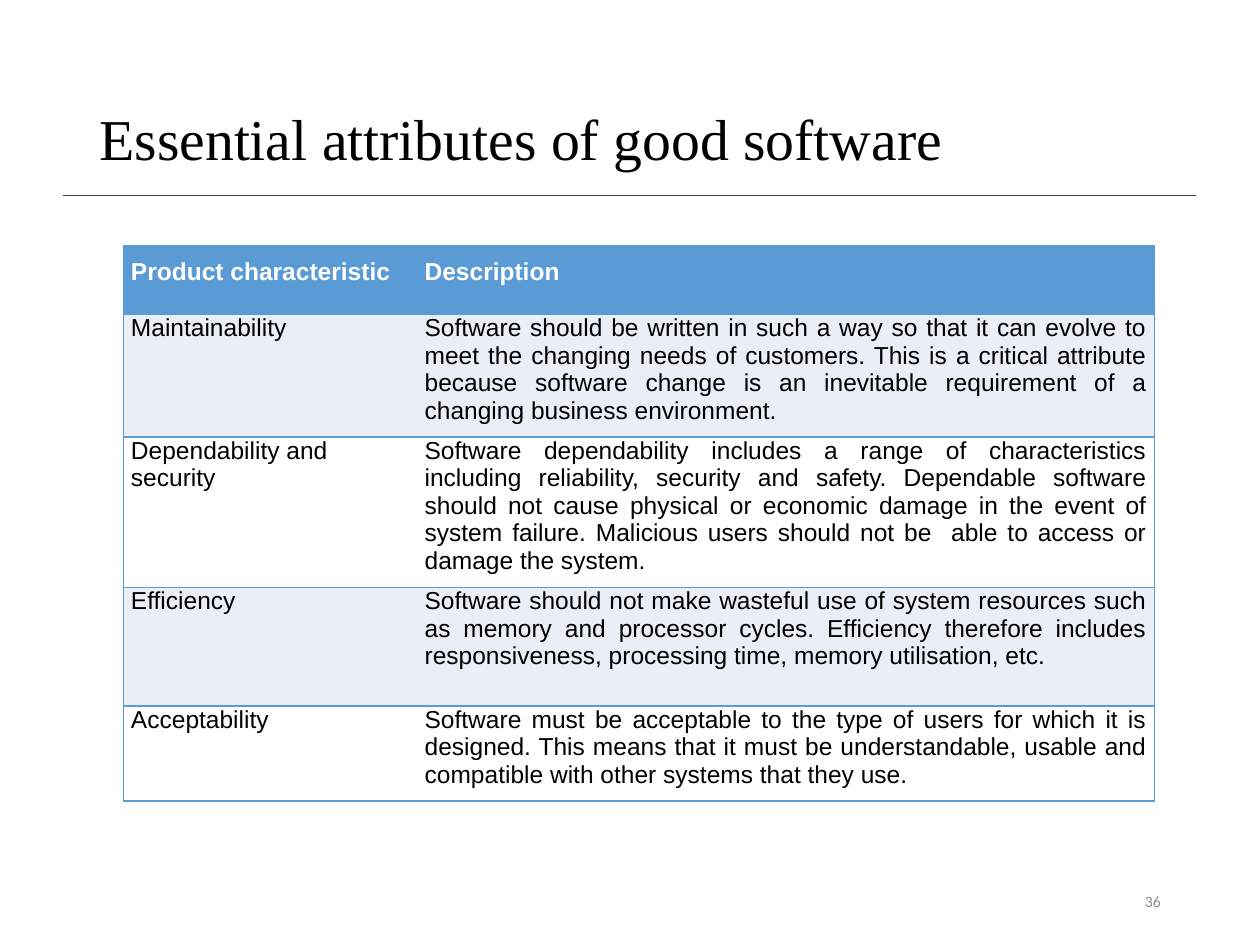
"""Build a slide with a table of the essential attributes of good software."""
from dataclasses import dataclass

from lxml.etree import SubElement
from pptx import Presentation
from pptx.dml.color import RGBColor
from pptx.enum.shapes import MSO_CONNECTOR
from pptx.enum.text import MSO_ANCHOR, MSO_AUTO_SIZE, PP_ALIGN
from pptx.oxml.ns import qn
from pptx.util import Cm, Pt

BLUE = "5B9BD5"
PALE_BLUE = "EAEFF7"
WHITE = "FFFFFF"
BLACK = "000000"


@dataclass
class Attribute:
    name: str
    description: str
    height: float
    name_align: PP_ALIGN = PP_ALIGN.JUSTIFY


HEADER = Attribute("Product characteristic", "Description", 1.39)
ATTRIBUTES = [
    Attribute(
        "Maintainability",
        "Software should be written in such a way so that it can evolve to meet the "
        "changing needs of customers. This is a critical attribute because software "
        "change is an inevitable requirement of a changing business environment.",
        2.46,
    ),
    Attribute(
        "Dependability and security",
        "Software dependability includes a range of characteristics including "
        "reliability, security and safety. Dependable software should not cause "
        "physical or economic damage in the event of system failure. Malicious users "
        "should not be  able to access or damage the system.",
        3.03,
        PP_ALIGN.LEFT,
    ),
    Attribute(
        "Efficiency",
        "Software should not make wasteful use of system resources such as memory and "
        "processor cycles. Efficiency therefore includes responsiveness, processing "
        "time, memory utilisation, etc.",
        2.39,
    ),
    Attribute(
        "Acceptability",
        "Software must be acceptable to the type of users for which it is designed. "
        "This means that it must be understandable, usable and compatible with other "
        "systems that they use. ",
        1.9,
    ),
]


def color(value: str) -> RGBColor:
    return RGBColor.from_string(value)


def write(frame, text: str, *, font: str, size: float, ink: str = BLACK,
          bold: bool = False, align: PP_ALIGN = PP_ALIGN.LEFT, spacing: float = 1.0) -> None:
    para = frame.paragraphs[0]
    para.alignment = align
    para.line_spacing = spacing
    span = para.add_run()
    span.text = text
    span.font.name = font
    span.font.size = Pt(size)
    span.font.bold = bold
    span.font.color.rgb = color(ink)


def set_borders(cell, open_side: str) -> None:
    properties = cell._tc.get_or_add_tcPr()
    for side in "LRTB":
        border = SubElement(properties, qn(f"a:ln{side}"), w=str(Pt(1)))
        if side == open_side:
            SubElement(border, qn("a:noFill"))
        else:
            fill = SubElement(border, qn("a:solidFill"))
            SubElement(fill, qn("a:srgbClr"), val=BLUE)


def add_title(page, text: str) -> None:
    title = page.shapes.title
    title.left, title.top, title.width, title.height = Cm(1.75), Cm(1.02), Cm(21.9), Cm(3.68)
    title.text_frame.auto_size = MSO_AUTO_SIZE.NONE
    title.text_frame.vertical_anchor = MSO_ANCHOR.MIDDLE
    write(title.text_frame, text, font="Times New Roman", size=33, spacing=0.9)


def add_rule(page) -> None:
    rule = page.shapes.add_connector(
        MSO_CONNECTOR.STRAIGHT, Cm(1.27), Cm(3.94), Cm(24.1), Cm(3.94))
    rule.line.color.rgb = color("404040")
    rule.line.width = Pt(1)
    SubElement(rule._element.spPr, qn("a:effectLst"))


def add_attribute_table(page) -> None:
    rows = [HEADER, *ATTRIBUTES]
    widths = [5.92, 14.86]
    table = page.shapes.add_table(
        len(rows), len(widths), Cm(2.49), Cm(4.95), Cm(sum(widths)),
        Cm(sum(row.height for row in rows))).table
    for column, width in zip(table.columns, widths):
        column.width = Cm(width)
    for index, row in enumerate(rows):
        is_header = row is HEADER
        background = BLUE if is_header else PALE_BLUE if index % 2 else WHITE
        table.rows[index].height = Cm(row.height)
        entries = [(row.name, row.name_align, "R"),
                   (row.description, PP_ALIGN.JUSTIFY, "L")]
        for cell, (text, align, open_side) in zip(table.rows[index].cells, entries):
            cell.margin_left = cell.margin_right = Cm(0.15)
            cell.margin_top = Cm(0.25 if is_header else 0)
            cell.margin_bottom = Cm(0.25)
            set_borders(cell, open_side)
            cell.fill.solid()
            cell.fill.fore_color.rgb = color(background)
            write(cell.text_frame, text, font="Arial", size=14, bold=is_header,
                  ink=WHITE if is_header else BLACK, align=align)


def add_page_number(page, number: str) -> None:
    box = page.shapes.add_textbox(Cm(17.93), Cm(17.65), Cm(5.72), Cm(1.02))
    box.text_frame.word_wrap = True
    box.text_frame.vertical_anchor = MSO_ANCHOR.MIDDLE
    write(box.text_frame, number, font="Calibri", size=9, ink="8C8C8C", align=PP_ALIGN.RIGHT)


def main() -> None:
    deck = Presentation()
    deck.slide_width, deck.slide_height = Cm(25.4), Cm(19.05)
    page = deck.slides.add_slide(deck.slide_layouts[5])
    add_rule(page)
    add_title(page, "Essential attributes of good software")
    add_attribute_table(page)
    add_page_number(page, "36")
    deck.save("out.pptx")


if __name__ == "__main__":
    main()
